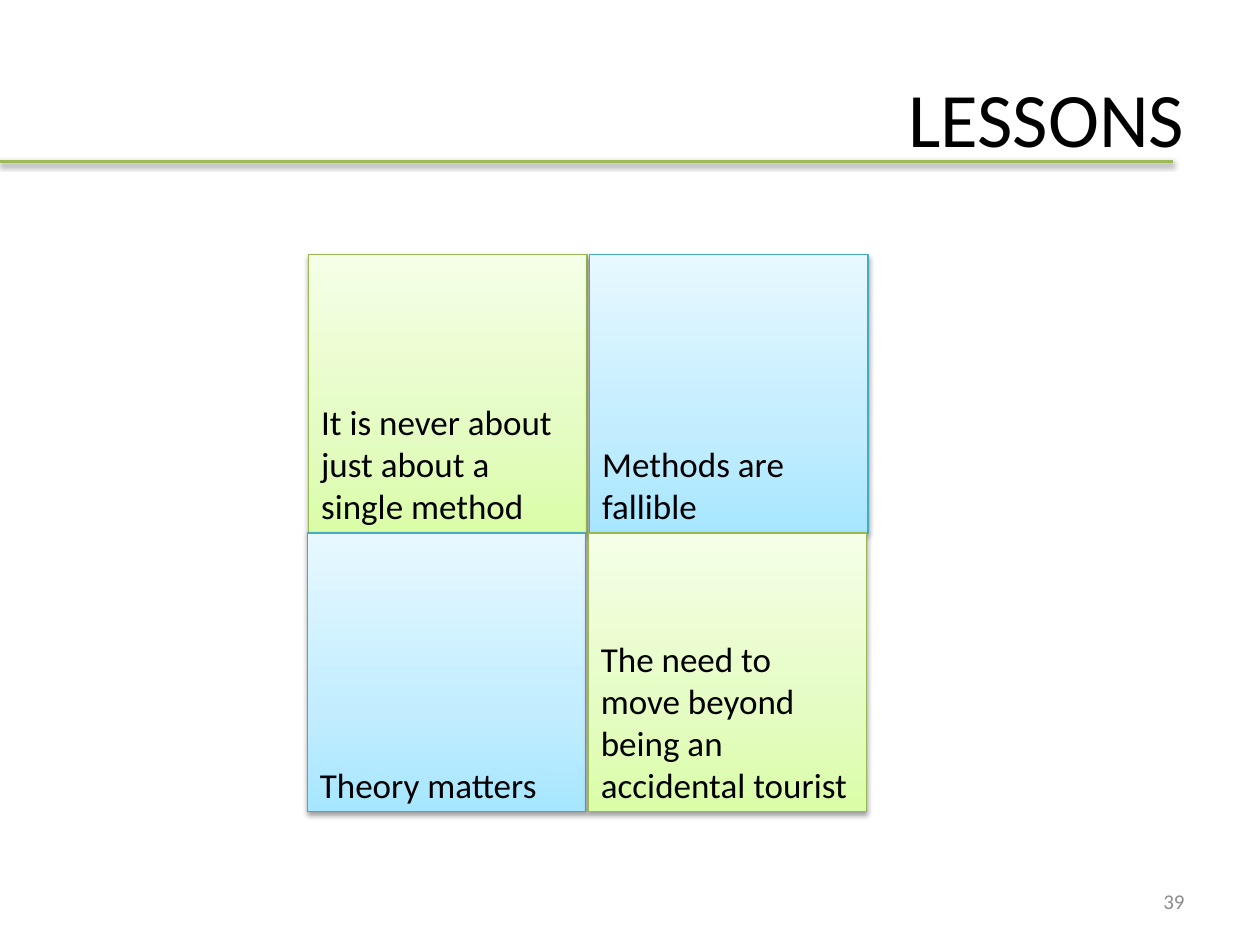
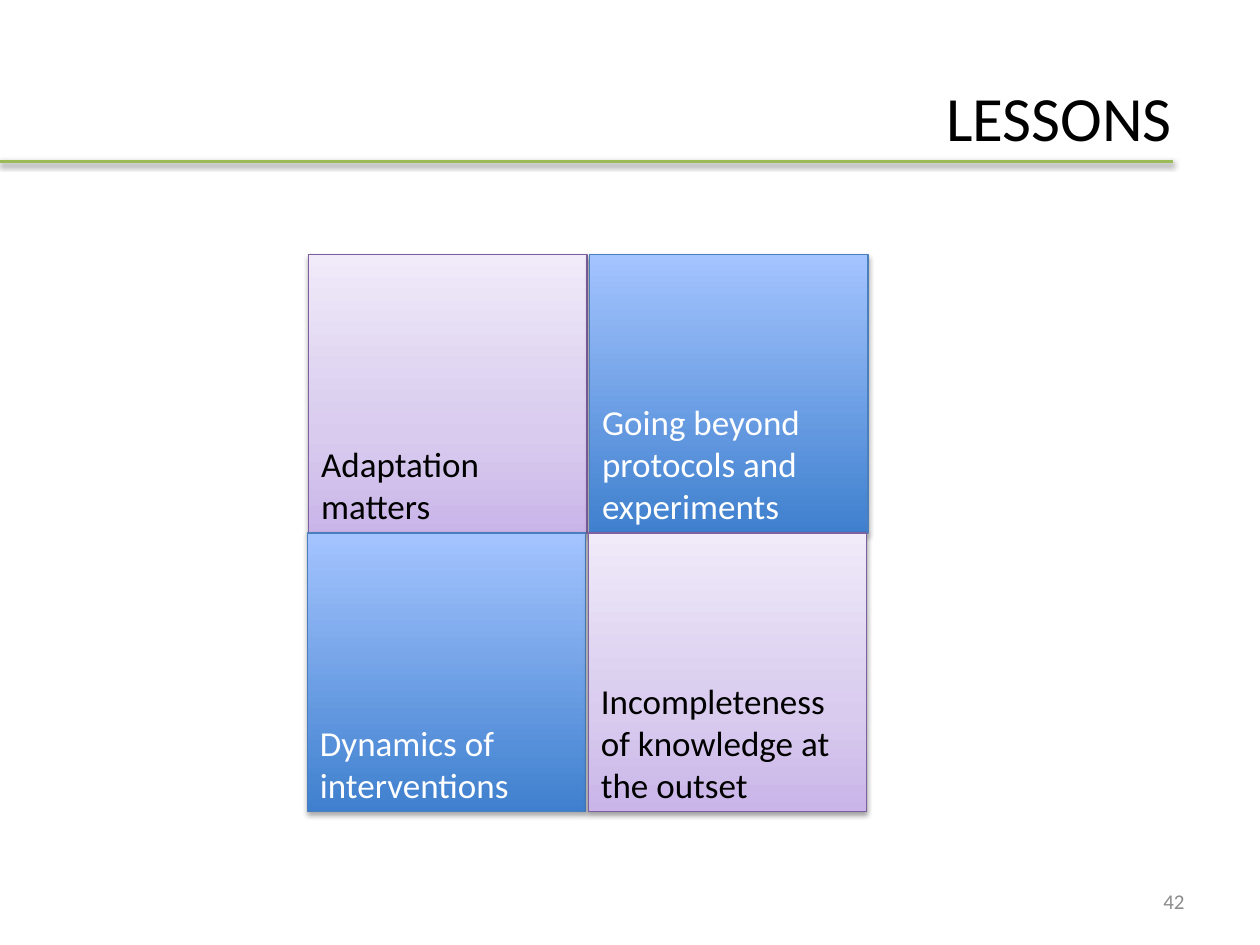
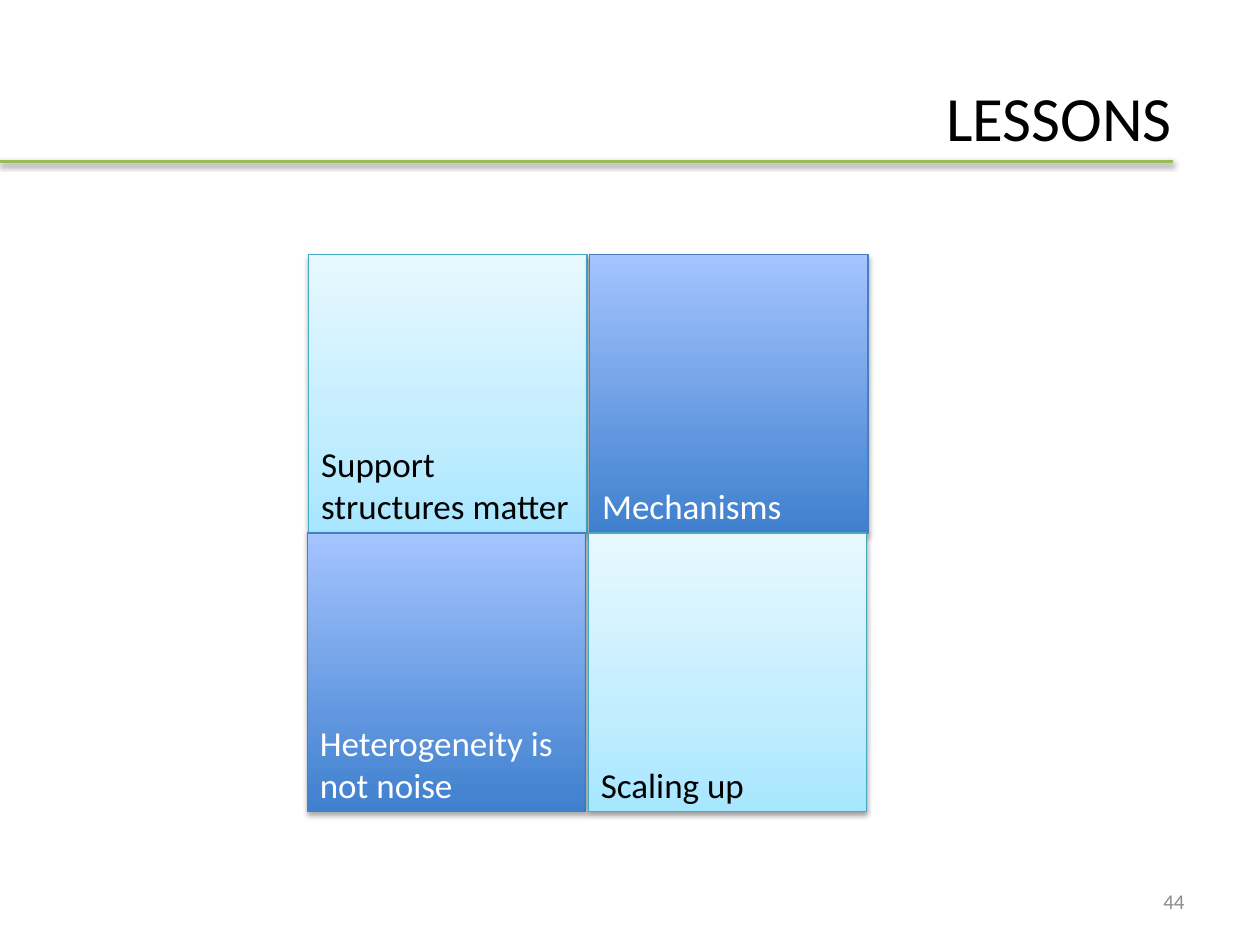
from copy import deepcopy
from lxml.etree import SubElement
from pptx import Presentation
from pptx.dml.color import RGBColor
from pptx.enum.shapes import MSO_CONNECTOR, MSO_SHAPE
from pptx.enum.text import MSO_ANCHOR, PP_ALIGN
from pptx.oxml.ns import qn
from pptx.util import Pt

BLACK, WHITE, GREY, RULE = "000000", "FFFFFF", "8C8C8C", "9BBB59"
GREEN = ["DAFDA7", "E4FCC2", "F5FFE7"], "98B955", BLACK
AQUA = ["A7E6FF", "C1EDFF", "E7F8FF"], "46AAC5", BLACK
LILAC = ["C9B5E8", "D8CBEE", "F0EAF9"], "7D60A0", BLACK
BLUE = ["3F80CE", "A4C4FF"], "4B7EBC", WHITE

LEFT, TOP, SIDE, STEP, SHIFT = 176.4, 145.44, 159.12, 160.56, 0.72

LESSONS = [
    (39, 44, 648, GREEN, AQUA, [
        "It is never about just about a single method",
        "Methods are fallible",
        "Theory matters",
        "The need to move beyond being an accidental tourist"]),
    (42, 36, 640.8, LILAC, BLUE, [
        "Adaptation matters",
        "Going beyond protocols and experiments",
        "Dynamics of interventions",
        "Incompleteness of knowledge at the outset"]),
    (44, 36, 640.8, AQUA, BLUE, [
        "Support structures matter",
        "Mechanisms",
        "Heterogeneity is not noise",
        "Scaling up"]),
]


def color(code):
    return RGBColor.from_string(code)


class Deck:
    font = "Calibri"

    def __init__(self):
        self.file = Presentation()
        self.file.slide_width, self.file.slide_height = Pt(720), Pt(540)

    def page(self):
        self.slide = self.file.slides.add_slide(self.file.slide_layouts[6])

    def letter(self, shape, text, size, tint, align, anchor):
        frame = shape.text_frame
        frame.word_wrap = True
        frame.vertical_anchor = anchor
        para = frame.paragraphs[0]
        para.text = text
        para.alignment = align
        para.font.name, para.font.size = self.font, Pt(size)
        para.font.color.rgb = color(tint)

    def label(self, text, size, tint, *box):
        shape = self.slide.shapes.add_textbox(*map(Pt, box))
        self.letter(shape, text, size, tint, PP_ALIGN.RIGHT, MSO_ANCHOR.MIDDLE)

    def shade(self, shape, drop=1.57, alpha=38):
        effects = SubElement(shape._element.spPr, qn("a:effectLst"))
        outer = SubElement(effects, qn("a:outerShdw"), blurRad=str(Pt(3.15)),
                           dist=str(Pt(drop)), dir="5400000", rotWithShape="0")
        tint = SubElement(outer, qn("a:srgbClr"), val=BLACK)
        SubElement(tint, qn("a:alpha"), val=str(alpha * 1000))

    def rule(self, start, end, top):
        line = self.slide.shapes.add_connector(
            MSO_CONNECTOR.STRAIGHT, Pt(start), Pt(top), Pt(end), Pt(top))
        line.line.color.rgb = color(RULE)
        line.line.width = Pt(2)
        self.shade(line)

    def blend(self, shape, tints):
        fill = shape.fill
        fill.gradient()
        fill.gradient_angle = 90
        stops = shape._element.spPr.find(".//" + qn("a:gsLst"))
        if len(tints) == 3:
            stops.insert(1, deepcopy(stops[0]))
        places = [0, 0.35, 1] if len(tints) == 3 else [0, 1]
        for stop, place, tint in zip(fill.gradient_stops, places, tints):
            stop.position = place
            stop.color.rgb = color(tint)

    def tile(self, text, look, left, top):
        tints, edge, ink = look
        shape = self.slide.shapes.add_shape(
            MSO_SHAPE.RECTANGLE, Pt(left), Pt(top), Pt(SIDE), Pt(SIDE))
        self.blend(shape, tints)
        shape.line.color.rgb = color(edge)
        shape.line.width = Pt(0.75)
        if look is BLUE:
            self.shade(shape, 1.81, 35)
        else:
            self.shade(shape)
        self.letter(shape, text, 20, ink, PP_ALIGN.LEFT, MSO_ANCHOR.BOTTOM)

    def lesson(self, number, size, width, main, other, texts):
        self.page()
        self.label("LESSONS", size, BLACK, 36, 21.6, width, 90)
        self.rule(670.32, 0, 92.16)
        for index, text in enumerate(texts):
            row, col = divmod(index, 2)
            look = main if row == col else other
            left = LEFT + col * STEP - row * SHIFT
            self.tile(text, look, left, TOP + row * SIDE)
        self.label(str(number), 12, GREY, 516.24, 500.4, 167.76, 28.8)


def main():
    deck = Deck()
    for lesson in LESSONS:
        deck.lesson(*lesson)
    deck.file.save("out.pptx")


if __name__ == "__main__":
    main()
